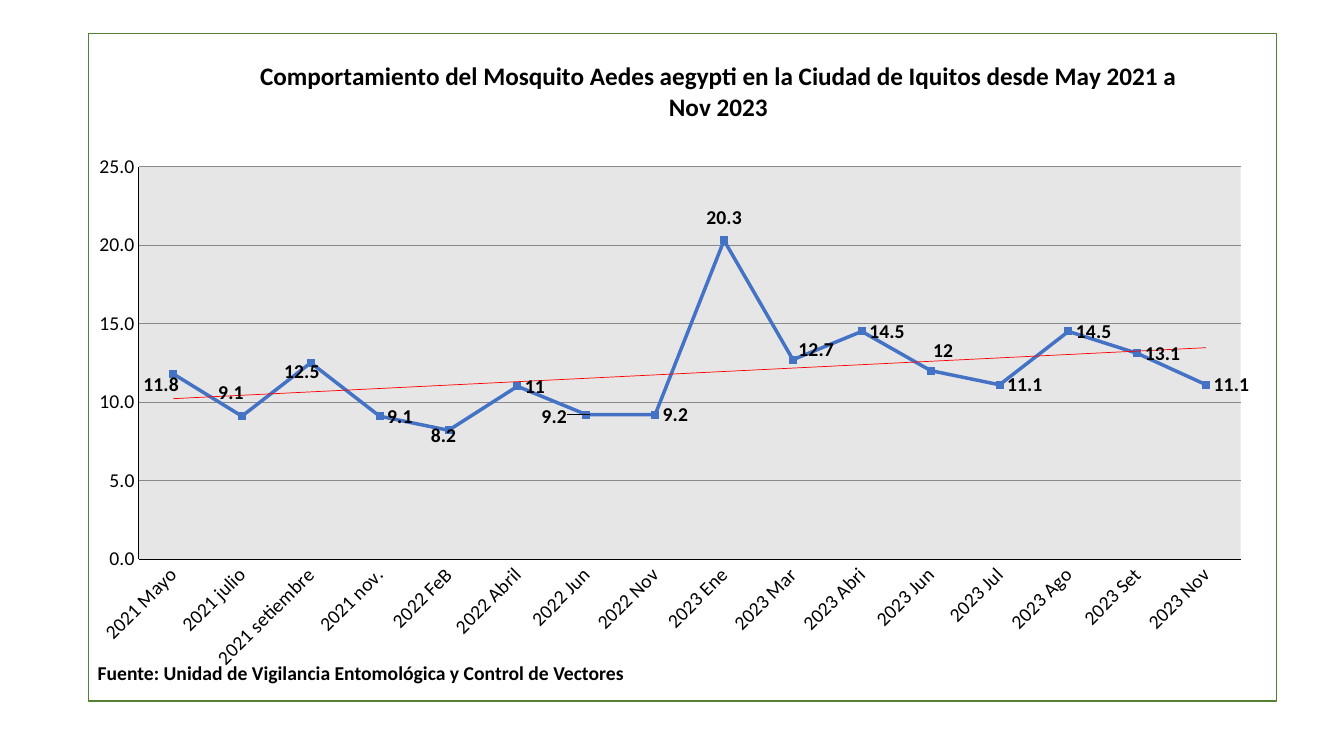
from lxml.etree import SubElement
from pptx import Presentation
from pptx.chart.data import CategoryChartData
from pptx.dml.color import RGBColor
from pptx.enum.chart import (XL_CHART_TYPE, XL_LABEL_POSITION as LabelPos,
                             XL_MARKER_STYLE as Marker, XL_TICK_MARK as Tick)
from pptx.oxml import parse_xml
from pptx.oxml.ns import nsdecls, qn
from pptx.util import Inches, Pt

COLORS = {"text": "000000", "series": "4472C4", "trend": "FF0000",
          "grid": "898989", "plot": "E7E6E6", "border": "548235",
          "page": "FFFFFF"}
TITLE = ("Comportamiento del Mosquito Aedes aegypti en la Ciudad de Iquitos "
         "desde May 2021 a Nov 2023")
SOURCE = "Fuente: Unidad de Vigilancia Entomológica y Control de Vectores"
INDEX_BY_MONTH = {
    "2021 Mayo": 11.8, "2021 julio": 9.1, "2021 setiembre": 12.5,
    "2021 nov.": 9.1, "2022 FeB": 8.2, "2022 Abril": 11, "2022 Jun": 9.2,
    "2022 Nov": 9.2, "2023 Ene": 20.3, "2023 Mar": 12.7, "2023 Abri": 14.5,
    "2023 Jun": 12, "2023 Jul": 11.1, "2023 Ago": 14.5, "2023 Set": 13.1,
    "2023 Nov": 11.1}
LABEL_SHIFTS = {
    "2021 Mayo": (-0.37, 0.11), "2021 julio": (-0.31, -0.23),
    "2021 setiembre": (-0.34, 0.09), "2022 FeB": (-0.25, 0.05),
    "2022 Jun": (-0.52, 0.02), "2023 Ene": (-0.25, -0.23),
    "2023 Mar": (-0.02, -0.1), "2023 Jun": (-0.05, -0.2)}
VALUE_SCALE = {"minimum_scale": 0, "maximum_scale": 25, "major_unit": 5,
               "has_major_gridlines": True}


def rgb(role):
    return RGBColor.from_string(COLORS[role])


def set_all(target, values):
    for attribute, value in values.items():
        setattr(target, attribute, value)


def style_font(font, size=14, bold=False):
    set_all(font, {"name": "Calibri", "size": Pt(size), "bold": bold})
    font.color.rgb = rgb("text")


def style_line(line, role, width):
    line.color.rgb = rgb(role)
    line.width = Pt(width)


def shape_xml(fill, line, width):
    return (f'<c:spPr {nsdecls("c", "a")}>{fill}<a:ln w="{Pt(width)}"><a:solidFill>'
            f'<a:srgbClr val="{COLORS[line]}"/></a:solidFill></a:ln></c:spPr>')


def solid_xml(role):
    return f'<a:solidFill><a:srgbClr val="{COLORS[role]}"/></a:solidFill>'


def place(parent, after, box, offsets, inner=False):
    for old in parent.findall(qn("c:layout")):
        parent.remove(old)
    layout = parent.makeelement(qn("c:layout"))
    manual = SubElement(layout, qn("c:manualLayout"))
    if inner:
        SubElement(manual, qn("c:layoutTarget"), val="inner")
    if after != "c:idx":
        for mode in ("xMode", "yMode"):
            SubElement(manual, qn(f"c:{mode}"), val="edge")
    for key, inches, whole in zip("xywh", offsets, (box[2], box[3]) * 2):
        SubElement(manual, qn(f"c:{key}"), val=f"{inches / whole:.5f}")
    if after is None:
        parent.insert(0, layout)
    else:
        parent.find(qn(after)).addnext(layout)


def style_axes(chart):
    for axis in (chart.category_axis, chart.value_axis):
        set_all(axis, {"major_tick_mark": Tick.NONE, "minor_tick_mark": Tick.NONE})
        style_font(axis.tick_labels.font)
        style_line(axis.format.line, "text", 0.5)
    body = chart.category_axis.tick_labels.font
    chart._chartSpace.xpath(".//c:catAx/c:txPr/a:bodyPr")[0].set("rot", "-2700000")
    set_all(chart.value_axis, VALUE_SCALE)
    set_all(chart.value_axis.tick_labels,
            {"number_format": "0.0", "number_format_is_linked": False})
    style_line(chart.value_axis.major_gridlines.format.line, "grid", 0.5)


def style_index(chart, box):
    index = chart.plots[0].series[0]
    index.smooth = False
    style_line(index.format.line, "series", 2.5)
    set_all(index.marker, {"style": Marker.SQUARE, "size": 5})
    index.marker.format.fill.solid()
    index.marker.format.fill.fore_color.rgb = rgb("series")
    style_line(index.marker.format.line, "series", 0.75)

    labels = index.data_labels
    set_all(labels, {"show_value": True, "position": LabelPos.RIGHT})
    style_font(labels.font, bold=True)
    months = list(INDEX_BY_MONTH)
    for month, shift in LABEL_SHIFTS.items():
        position = months.index(month)
        label = index.points[position].data_label
        style_font(label.font, bold=True)
        label.position = LabelPos.RIGHT
        node = chart._chartSpace.xpath(f'.//c:dLbl[c:idx/@val="{position}"]')[0]
        place(node, "c:idx", box, shift)

    trend = parse_xml(
        f'<c:trendline {nsdecls("c", "a")}>{shape_xml("", "trend", 0.5)}'
        '<c:trendlineType val="linear"/><c:dispRSqr val="0"/>'
        '<c:dispEq val="0"/></c:trendline>')
    chart._chartSpace.xpath(".//c:ser/c:dLbls")[0].addnext(trend)


def add_trend_chart(slide, box):
    data = CategoryChartData()
    data.categories = list(INDEX_BY_MONTH)
    data.add_series("Series 1", list(INDEX_BY_MONTH.values()))
    chart = slide.shapes.add_chart(
        XL_CHART_TYPE.LINE_MARKERS, *map(Inches, box), data).chart
    chart.has_legend = False
    chart.plots[0].vary_by_categories = False
    style_font(chart.font)

    heading = chart.chart_title.text_frame
    heading.text = TITLE
    style_font(heading.paragraphs[0].runs[0].font, 18, True)

    style_axes(chart)
    style_index(chart, box)

    space = chart._chartSpace
    place(space.xpath(".//c:title")[0], "c:tx", box, (1.66, 0.2))
    plot = space.xpath(".//c:plotArea")[0]
    place(plot, None, box, (0.5, 1.32, 10.94, 3.9), inner=True)
    plot.append(parse_xml(
        f'<c:spPr {nsdecls("c", "a")}>{solid_xml("plot")}'
        '<a:ln><a:noFill/></a:ln></c:spPr>'))
    space.find(qn("c:chart")).addnext(
        parse_xml(shape_xml(solid_xml("page"), "border", 0.75)))
    space.find(qn("c:date1904")).addnext(
        parse_xml(f'<c:roundedCorners {nsdecls("c")} val="0"/>'))


def add_source(slide, box):
    frame = slide.shapes.add_textbox(*map(Inches, box)).text_frame
    frame.word_wrap = True
    frame.text = SOURCE
    style_font(frame.paragraphs[0].runs[0].font, bold=True)


def main():
    deck = Presentation()
    set_all(deck, {"slide_width": Inches(13.33), "slide_height": Inches(7.5)})
    slide = deck.slides.add_slide(deck.slide_layouts[6])
    left, top, width, height = 0.87, 0.33, 11.8, 6.63
    add_trend_chart(slide, (left, top, width, height))
    add_source(slide, (left, top + height - 0.45, 8.94, 0.25))
    deck.save("out.pptx")


if __name__ == "__main__":
    main()
